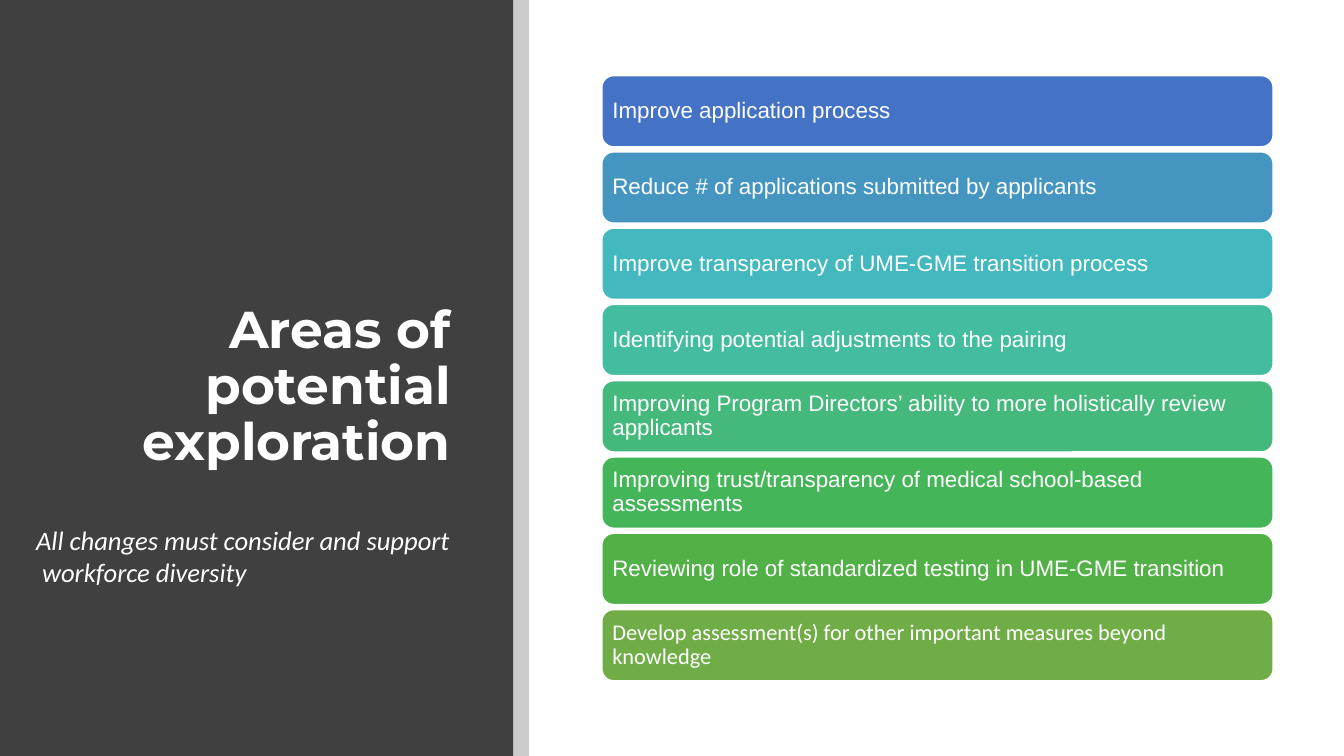
from dataclasses import dataclass

from lxml.etree import SubElement
from pptx import Presentation
from pptx.dml.color import RGBColor
from pptx.enum.shapes import MSO_SHAPE as Kind
from pptx.enum.text import MSO_ANCHOR as Anchor, MSO_AUTO_SIZE as Fit, PP_ALIGN as Align
from pptx.oxml.ns import qn
from pptx.util import Inches, Pt

WIDE, HIGH = Inches(13.33), Inches(7.5)
WHITE = "FFFFFF"


@dataclass(frozen=True)
class Box:
    """An area in percent of the slide's width and height."""
    left: float
    top: float
    width: float
    height: float

    def emu(self) -> tuple[int, int, int, int]:
        return (int(WIDE * self.left / 100), int(HIGH * self.top / 100),
                int(WIDE * self.width / 100), int(HIGH * self.height / 100))


@dataclass(frozen=True)
class Area:
    text: str
    fill: str
    font: str = "Arial"


AREAS = [
    Area("Improve application process", "4472C4"),
    Area("Reduce # of applications submitted by applicants", "4496C1"),
    Area("Improve transparency of UME-GME transition process", "43B8BF"),
    Area("Identifying potential adjustments to the pairing", "43BCA0"),
    Area("Improving Program Directors’ ability to more holistically review applicants", "44B97B"),
    Area("Improving trust/transparency of medical school-based assessments", "45B559"),
    Area("Reviewing role of standardized testing in UME-GME transition", "52B146"),
    Area("Develop assessment(s) for other important measures beyond knowledge", "70AD47", "Calibri"),
]
NOTE = ["All changes must consider and support", " workforce diversity"]

PANEL = Box(0, 0, 38.18, 100)
BAND = Box(38.18, 0, 1.2, 100)
TITLE = Box(3.68, 11.87, 30.6, 78.8)
LABEL = Box(1.95, 68.67, 33.75, 9.87)
FIRST = Box(44.78, 10, 49.95, 9.42)
PITCH = 10.09


def color(code: str) -> RGBColor:
    return RGBColor.from_string(code)


def add_run(para, text: str, font: str, size: float, bold: bool = False, slant: bool = False) -> None:
    run = para.add_run()
    run.text = text
    run.font.name, run.font.size = font, Pt(size)
    run.font.bold, run.font.italic = bold, slant
    run.font.color.rgb = color(WHITE)


def add_block(slide, kind: Kind, box: Box, fill: str):
    block = slide.shapes.add_shape(kind, *box.emu())
    block.shadow.inherit = False
    block.fill.solid()
    block.fill.fore_color.rgb = color(fill)
    block.line.fill.background()
    return block


def add_card(slide, area: Area, box: Box) -> None:
    card = add_block(slide, Kind.ROUNDED_RECTANGLE, box, area.fill)
    card.line.color.rgb = color(WHITE)
    card.line.width = Pt(1)
    frame = card.text_frame
    frame.word_wrap, frame.vertical_anchor = True, Anchor.MIDDLE
    frame.margin_left = frame.margin_right = Inches(0.07)
    frame.margin_top = frame.margin_bottom = Inches(0.07)
    para = frame.paragraphs[0]
    para.alignment, para.line_spacing = Align.LEFT, 0.9
    add_run(para, area.text, area.font, 16)


def add_title(slide) -> None:
    title = slide.shapes.title
    title.left, title.top, title.width, title.height = TITLE.emu()
    frame = title.text_frame
    frame.word_wrap, frame.auto_size = True, Fit.NONE
    frame.vertical_anchor = Anchor.MIDDLE
    para = frame.paragraphs[0]
    para.alignment, para.line_spacing = Align.RIGHT, 0.9
    add_run(para, "Areas of potential exploration", "Montserrat", 37, bold=True)


def add_side(slide) -> None:
    """Dark panel behind the title, with a translucent band at its edge."""
    panel = add_block(slide, Kind.RECTANGLE, PANEL, "404040")
    slide.shapes.title.element.addprevious(panel.element)
    band = add_block(slide, Kind.RECTANGLE, BAND, "000000")
    tint = band.element.spPr.find(qn("a:solidFill"))[0]
    SubElement(tint, qn("a:alpha"), val="20000")


def add_note(slide) -> None:
    frame = slide.shapes.add_textbox(*LABEL.emu()).text_frame
    frame.word_wrap, frame.auto_size = True, Fit.SHAPE_TO_FIT_TEXT
    for i, text in enumerate(NOTE):
        para = frame.add_paragraph() if i else frame.paragraphs[0]
        add_run(para, text, "Calibri", 19, slant=True)


def main() -> None:
    deck = Presentation()
    deck.slide_width, deck.slide_height = WIDE, HIGH
    slide = deck.slides.add_slide(deck.slide_layouts.get_by_name("Title Only"))
    add_side(slide)
    add_title(slide)
    for i, area in enumerate(AREAS):
        add_card(slide, area, Box(FIRST.left, FIRST.top + i * PITCH, FIRST.width, FIRST.height))
    add_note(slide)
    deck.save("out.pptx")


if __name__ == "__main__":
    main()
